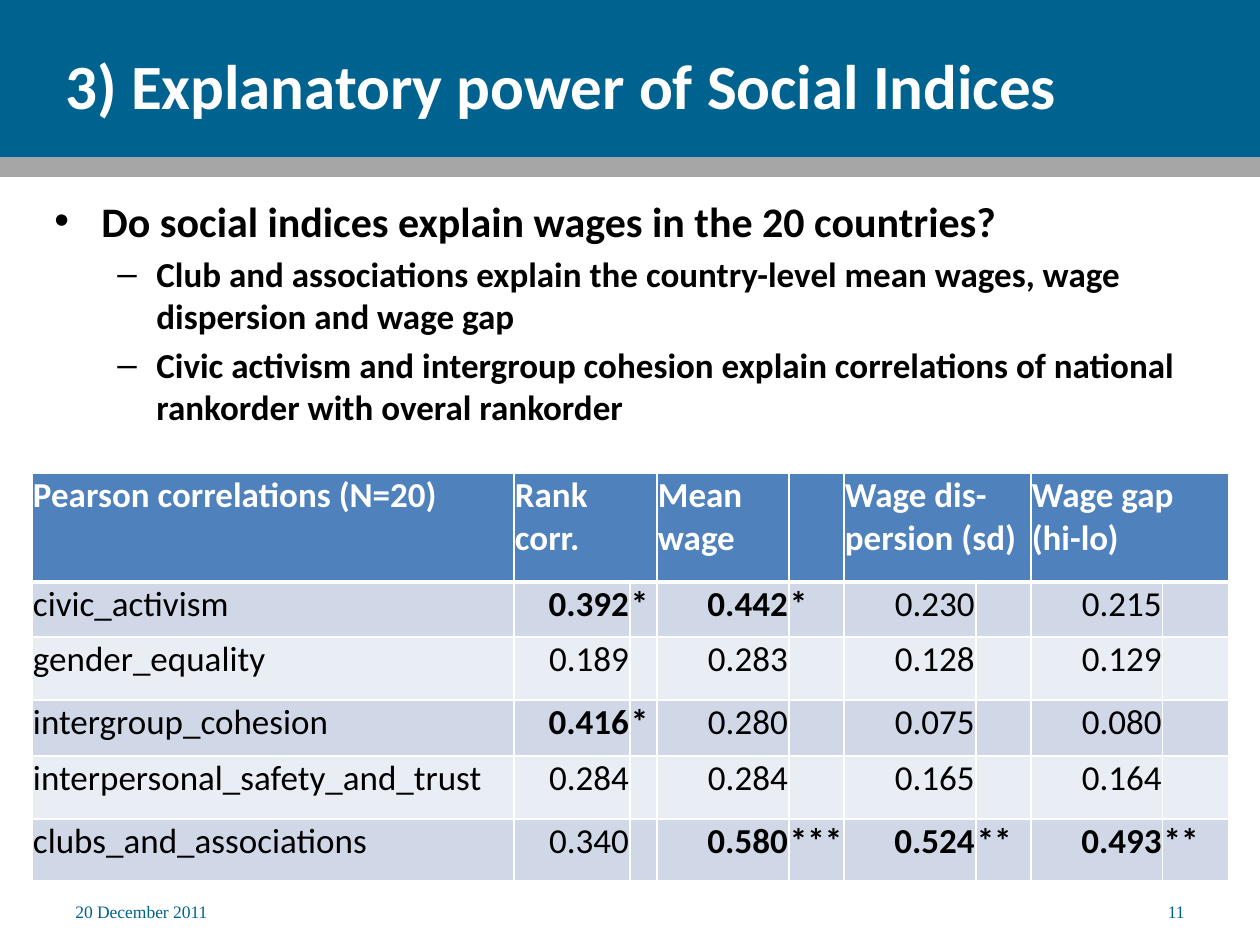
import pptx
import pptx.dml.color
import pptx.enum.shapes
import pptx.enum.text
import pptx.oxml
import pptx.oxml.ns
import pptx.util

RGB = pptx.dml.color.RGBColor
BLUE = RGB(0x00, 0x63, 0x8F)
GREY = RGB(0xA6, 0xA6, 0xA6)
WHITE = RGB(0xFF, 0xFF, 0xFF)
BLACK = RGB(0x00, 0x00, 0x00)
HEADER = RGB(0x4F, 0x81, 0xBD)
BANDS = (RGB(0xD0, 0xD8, 0xE8), RGB(0xE9, 0xED, 0xF4))

LEFT = pptx.enum.text.PP_ALIGN.LEFT
RIGHT = pptx.enum.text.PP_ALIGN.RIGHT
TOP = pptx.enum.text.MSO_ANCHOR.TOP
MIDDLE = pptx.enum.text.MSO_ANCHOR.MIDDLE

COLUMN_WIDTHS = (482, 116, 27, 132, 55, 132, 55, 132, 66)
ROW_HEIGHTS = (109, 55, 63, 56, 63, 62)
HEADINGS = {0: "Pearson correlations (N=20)", 1: "Rank corr.", 3: "Mean wage",
            5: "Wage dis- persion (sd)", 7: "Wage gap \v(hi-lo)"}
MERGED_HEADINGS = (1, 5, 7)
CORRELATIONS = (
    ("civic_activism", "0.392", "*", "0.442", "*", "0.230", "", "0.215", ""),
    ("gender_equality", "0.189", "", "0.283", "", "0.128", "", "0.129", ""),
    ("intergroup_cohesion", "0.416", "*", "0.280", "", "0.075", "", "0.080", ""),
    ("interpersonal_safety_and_trust", "0.284", "", "0.284", "", "0.165", "",
     "0.164", ""),
    ("clubs_and_associations", "0.340", "", "0.580", "***", "0.524", "**",
     "0.493", "**"),
)
POINTS = (
    (0, "Do social indices explain wages in the 20 countries?"),
    (1, "Club and associations explain the country-level mean wages, "
        "wage dispersion and wage gap"),
    (1, "Civic activism and intergroup cohesion explain correlations of "
        "national rankorder with overal rankorder"),
)
# Per level: bullet, text size, left margin and hanging indent in px
LEVELS = (("•", 24, 47, 47), ("–", 20, 102, 39))


def px(length):
    """Turn px (126 to the inch) into EMU."""
    return pptx.util.Emu(round(length * 914400 / 126))


def add_span(para, text, size, color, bold=False, font="Calibri"):
    for index, line in enumerate(text.split("\v")):
        if index:
            para.add_line_break()
        span = para.add_run()
        span.text = line
        span.font.name = font
        span.font.size = pptx.util.Pt(size)
        span.font.bold = bold
        span.font.color.rgb = color


def add_text_box(page, left, top, width, height, anchor):
    box = page.shapes.add_textbox(px(left), px(top), px(width), px(height))
    box.text_frame.word_wrap = True
    box.text_frame.vertical_anchor = anchor
    return box.text_frame


def add_band(page, left, top, width, height, color):
    band = page.shapes.add_shape(pptx.enum.shapes.MSO_SHAPE.RECTANGLE,
                                 px(left), px(top), px(width), px(height))
    band.shadow.inherit = False
    band.fill.solid()
    band.fill.fore_color.rgb = color
    band.line.fill.background()


def add_banner(page, left, top, width):
    add_band(page, left, top, width, 157, BLUE)
    add_band(page, left, top + 157, width, 20, GREY)
    frame = add_text_box(page, left + 53, top + 20, width - 53, 129, MIDDLE)
    add_span(frame.paragraphs[0], "3) Explanatory power of Social Indices",
             36, WHITE, bold=True)


def add_bullet(para, mark, margin, hanging):
    properties = para._p.get_or_add_pPr()
    properties.set("marL", str(px(margin)))
    properties.set("indent", str(-px(hanging)))
    namespace = pptx.oxml.ns.nsdecls("a")
    for element in ('buFont {} typeface="Arial"', 'buChar {} char="' + mark + '"'):
        properties.append(pptx.oxml.parse_xml(f"<a:{element.format(namespace)}/>"))


def add_points(page, left, top, width, height):
    frame = add_text_box(page, left, top, width, height, TOP)
    for index, (level, text) in enumerate(POINTS):
        para = frame.add_paragraph() if index else frame.paragraphs[0]
        mark, size, margin, hanging = LEVELS[level]
        para.level = level
        add_bullet(para, mark, margin, hanging)
        if index:
            para.space_before = pptx.util.Pt(size * 0.2)
        add_span(para, text, size, BLACK, bold=True)


def set_borders(cell, **points):
    """Draw white borders, given as points for each of L, R, T and B."""
    properties = cell._tc.get_or_add_tcPr()
    for index, side in enumerate("LRTB"):
        properties.insert(index, pptx.oxml.parse_xml(
            f'<a:ln{side} {pptx.oxml.ns.nsdecls("a")} '
            f'w="{pptx.util.Pt(points[side])}"><a:solidFill>'
            f'<a:srgbClr val="{WHITE}"/></a:solidFill></a:ln{side}>'))


def fill_cell(cell, text, fill, color, bold, align):
    cell.fill.solid()
    cell.fill.fore_color.rgb = fill
    cell.margin_left = cell.margin_right = cell.margin_top = px(1)
    cell.margin_bottom = 0
    para = cell.text_frame.paragraphs[0]
    para.alignment = align
    para.font.size = pptx.util.Pt(20)
    if text:
        add_span(para, text, 20, color, bold)


def add_correlation_table(page, left, top):
    table = page.shapes.add_table(
        len(ROW_HEIGHTS), len(COLUMN_WIDTHS), px(left), px(top),
        px(sum(COLUMN_WIDTHS)), px(sum(ROW_HEIGHTS))).table
    table.first_row = table.horz_banding = False
    for column, width in zip(table.columns, COLUMN_WIDTHS):
        column.width = px(width)
    for row, height in zip(table.rows, ROW_HEIGHTS):
        row.height = px(height)
    for number in range(len(COLUMN_WIDTHS)):
        cell = table.cell(0, number)
        fill_cell(cell, HEADINGS.get(number, ""), HEADER, WHITE, True, LEFT)
        set_borders(cell, L=1, R=1, T=1, B=3)
    for number in MERGED_HEADINGS:
        table.cell(0, number).merge(table.cell(0, number + 1))
    for row, values in enumerate(CORRELATIONS, 1):
        for number, text in enumerate(values):
            is_value = number % 2 == 1
            # Significant values and their stars are bold
            stars = values[number + 1] if is_value else text
            bold = number > 0 and bool(stars)
            cell = table.cell(row, number)
            fill_cell(cell, text, BANDS[(row - 1) % 2], BLACK, bold,
                      RIGHT if is_value else LEFT)
            set_borders(cell, L=1, R=1, T=3 if row == 1 else 1, B=1)


def add_footer(page, left, top, width, height):
    part = 294
    for start, text, align in ((left, "20 December 2011", LEFT),
                               (left + width - part, "11", RIGHT)):
        frame = add_text_box(page, start, top, part, height, MIDDLE)
        frame.paragraphs[0].alignment = align
        add_span(frame.paragraphs[0], text, 10, BLUE, font="Times New Roman")


def main():
    deck = pptx.Presentation()
    deck.slide_width, deck.slide_height = px(1260), px(945)
    page = deck.slides.add_slide(deck.slide_layouts[6])
    add_banner(page, 0, 0, 1260)
    add_correlation_table(page, 32, 473)
    add_points(page, 42, 189, 1218, 273)
    add_footer(page, 63, 896, 1134, 30)
    deck.save("out.pptx")


if __name__ == "__main__":
    main()
